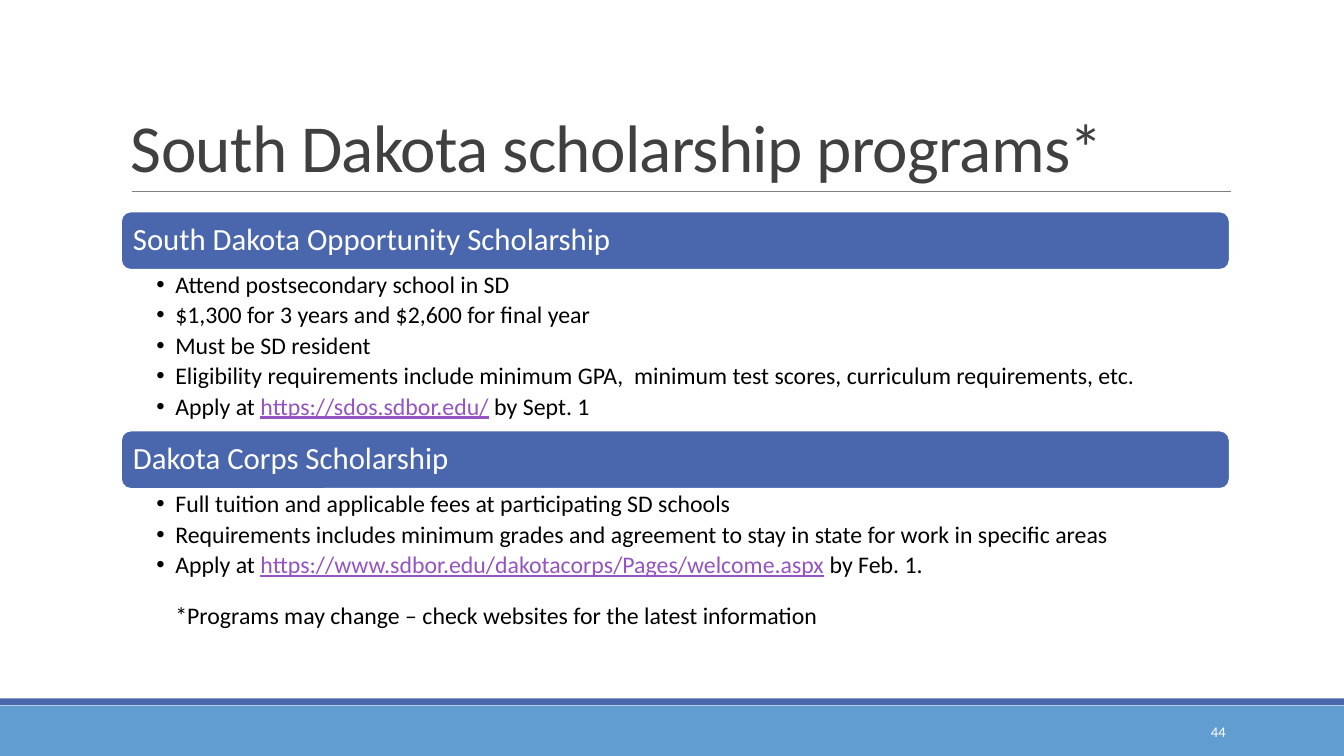
import dataclasses
import typing

import lxml.etree
import pptx
import pptx.dml.color
import pptx.enum.shapes
import pptx.enum.text
import pptx.oxml.ns
import pptx.util

Cm = pptx.util.Cm
Pt = pptx.util.Pt
Anchor = pptx.enum.text.MSO_ANCHOR
Align = pptx.enum.text.PP_ALIGN
ShapeKind = pptx.enum.shapes.MSO_SHAPE

COLORS = {
    "white": "FFFFFF",
    "black": "000000",
    "title": "404040",
    "rule": "808080",
    "banner": "4A66AC",
    "footer": "629DD1",
    "link": "9454C3",
}
FONT = "Calibri"
SLIDE_WIDTH, SLIDE_HEIGHT = 33.87, 19.05
LEFT, WIDTH = 3.05, 27.94
BANNER_HEIGHT = 1.47
BULLET_INDENT = 0.48


@dataclasses.dataclass(frozen=True)
class Box:
    left: float
    top: float
    width: float
    height: float

    def lengths(self) -> list[pptx.util.Length]:
        return [Cm(value) for value in dataclasses.astuple(self)]


@dataclasses.dataclass(frozen=True)
class Item:
    text: str
    address: str = ""
    ending: str = ""


@dataclasses.dataclass(frozen=True)
class Program:
    name: str
    banner_top: float
    list_top: float
    list_height: float
    items: tuple[Item, ...]
    note: str = ""


PROGRAMS = (
    Program("South Dakota Opportunity Scholarship", 5.33, 6.79, 4.04, (
        Item("Attend postsecondary school in SD"),
        Item("$1,300 for 3 years and $2,600 for final year"),
        Item("Must be SD resident"),
        Item("Eligibility requirements include minimum GPA,  minimum test scores, "
             "curriculum requirements, etc."),
        Item("Apply at ", "https://sdos.sdbor.edu/", " by Sept. 1"),
    )),
    Program("Dakota Corps Scholarship", 10.85, 12.32, 3.78, (
        Item("Full tuition and applicable fees at participating SD schools"),
        Item("Requirements includes minimum grades and agreement to stay in state "
             "for work in specific areas"),
        Item("Apply at ", "https://www.sdbor.edu/dakotacorps/Pages/welcome.aspx",
             " by Feb. 1."),
    ), "*Programs may change – check websites for the latest information"),
)


def rgb(name: str) -> pptx.dml.color.RGBColor:
    return pptx.dml.color.RGBColor.from_string(COLORS[name])


def set_font(paragraph: typing.Any, size: float, color: str) -> None:
    paragraph.font.name = FONT
    paragraph.font.size = Pt(size)
    paragraph.font.color.rgb = rgb(color)


def set_frame(shape: typing.Any, anchor: typing.Any,
              margins: tuple[float, float, float, float]) -> typing.Any:
    frame = shape.text_frame
    frame.word_wrap = True
    frame.vertical_anchor = anchor
    (frame.margin_left, frame.margin_top,
     frame.margin_right, frame.margin_bottom) = [Cm(margin) for margin in margins]
    return frame


def add_block(slide: typing.Any, kind: typing.Any, box: Box, color: str) -> typing.Any:
    shape = slide.shapes.add_shape(kind, *box.lengths())
    shape.shadow.inherit = False
    shape.fill.solid()
    shape.fill.fore_color.rgb = rgb(color)
    shape.line.fill.background()
    return shape


def add_label(slide: typing.Any, box: Box, text: str, size: float, color: str,
              anchor: typing.Any, alignment: typing.Any) -> typing.Any:
    shape = slide.shapes.add_textbox(*box.lengths())
    frame = set_frame(shape, anchor, (0.25, 0.13, 0.25, 0.13))
    paragraph = frame.paragraphs[0]
    paragraph.text = text
    paragraph.alignment = alignment
    set_font(paragraph, size, color)
    return paragraph


def add_title_rule(slide: typing.Any) -> None:
    rule = slide.shapes.add_connector(
        pptx.enum.shapes.MSO_CONNECTOR.STRAIGHT, Cm(3.33), Cm(4.83), Cm(31.01), Cm(4.83))
    rule.line.color.rgb = rgb("rule")
    rule.line.width = Pt(0.5)
    lxml.etree.SubElement(rule._element.spPr, pptx.oxml.ns.qn("a:effectLst"))


def add_bullet(paragraph: typing.Any) -> None:
    properties = paragraph._p.get_or_add_pPr()
    properties.set("indent", str(-Cm(BULLET_INDENT)))
    font = lxml.etree.Element(pptx.oxml.ns.qn("a:buFont"), typeface="Arial")
    mark = lxml.etree.Element(pptx.oxml.ns.qn("a:buChar"), char="•")
    defaults = properties.find(pptx.oxml.ns.qn("a:defRPr"))
    defaults.addprevious(font)
    defaults.addprevious(mark)


def format_line(paragraph: typing.Any) -> None:
    set_font(paragraph, 17, "black")
    paragraph.line_spacing = 0.9
    paragraph.space_after = Pt(3.4)
    paragraph._p.get_or_add_pPr().set("marL", str(Cm(BULLET_INDENT)))


def add_item(paragraph: typing.Any, item: Item) -> None:
    format_line(paragraph)
    add_bullet(paragraph)
    paragraph.add_run().text = item.text
    if item.address:
        address = paragraph.add_run()
        address.text = item.address
        address.font.color.rgb = rgb("link")
        address.font.underline = True
        paragraph.add_run().text = item.ending


def add_program(slide: typing.Any, program: Program) -> None:
    banner = add_block(slide, ShapeKind.ROUNDED_RECTANGLE,
                       Box(LEFT, program.banner_top, WIDTH, BANNER_HEIGHT), "banner")
    banner.line.color.rgb = rgb("white")
    banner.line.width = Pt(1.25)
    frame = set_frame(banner, Anchor.MIDDLE, (0.23, 0.23, 0.23, 0.23))
    heading = frame.paragraphs[0]
    heading.text = program.name
    heading.alignment = Align.LEFT
    heading.line_spacing = 0.9
    set_font(heading, 22, "white")

    box = Box(LEFT, program.list_top, WIDTH, program.list_height)
    details = slide.shapes.add_textbox(*box.lengths())
    frame = set_frame(details, Anchor.TOP, (0.89, 0.08, 0.43, 0.08))
    for index, item in enumerate(program.items):
        add_item(frame.add_paragraph() if index else frame.paragraphs[0], item)
    if program.note:
        note = frame.add_paragraph()
        note.text = program.note
        format_line(note)
        note.space_before = Pt(14.6)


def main() -> None:
    presentation = pptx.Presentation()
    presentation.slide_width = Cm(SLIDE_WIDTH)
    presentation.slide_height = Cm(SLIDE_HEIGHT)
    slide = presentation.slides.add_slide(presentation.slide_layouts[6])

    add_block(slide, ShapeKind.RECTANGLE, Box(0, 17.78, SLIDE_WIDTH, 1.27), "footer")
    add_block(slide, ShapeKind.RECTANGLE, Box(0, 17.6, SLIDE_WIDTH, 0.17), "banner")
    add_title_rule(slide)
    title = add_label(slide, Box(LEFT, 0.79, WIDTH, 4.04),
                      "South Dakota scholarship programs*", 48, "title",
                      Anchor.BOTTOM, Align.LEFT)
    title.line_spacing = 0.85
    title.runs[0]._r.get_or_add_rPr().set("spc", "-50")
    for program in PROGRAMS:
        add_program(slide, program)
    add_label(slide, Box(27.51, 17.93, 3.63, 1.02), "44", 10.5, "white",
              Anchor.MIDDLE, Align.RIGHT)
    presentation.save("out.pptx")


if __name__ == "__main__":
    main()
